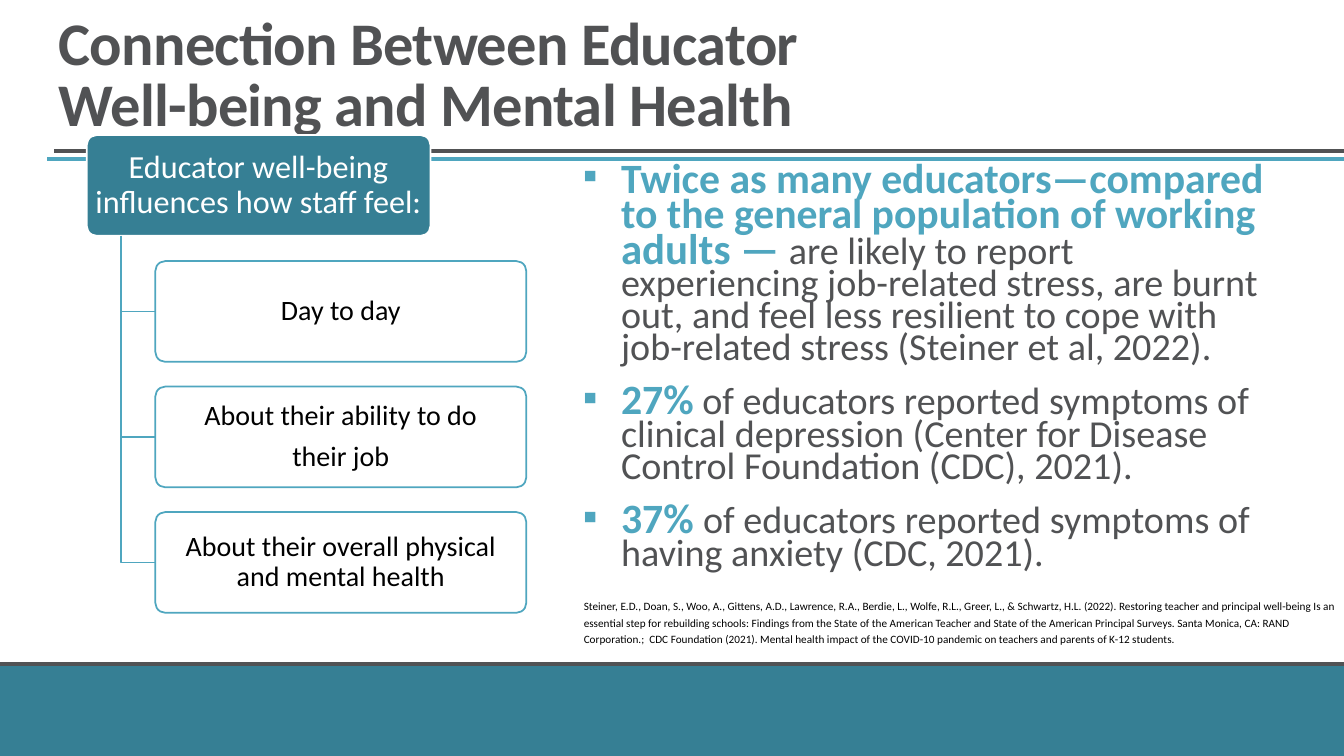
"""Builds the slide on educator well-being and mental health."""
from dataclasses import dataclass
from typing import NamedTuple

from lxml import etree
from pptx import Presentation
from pptx.dml.color import RGBColor
from pptx.enum.shapes import MSO_CONNECTOR, MSO_SHAPE
from pptx.enum.text import MSO_ANCHOR, MSO_AUTO_SIZE, PP_ALIGN
from pptx.oxml.ns import qn
from pptx.util import Inches, Pt

LEFT, CENTER = PP_ALIGN.LEFT, PP_ALIGN.CENTER
TOP, MIDDLE, BOTTOM = MSO_ANCHOR.TOP, MSO_ANCHOR.MIDDLE, MSO_ANCHOR.BOTTOM
RECT, ROUNDED = MSO_SHAPE.RECTANGLE, MSO_SHAPE.ROUNDED_RECTANGLE
STRAIGHT, NO_FIT = MSO_CONNECTOR.STRAIGHT, MSO_AUTO_SIZE.NONE


@dataclass(frozen=True)
class Theme:
    font: str = "Calibri"
    gray: str = "515254"
    sky: str = "4FA6BF"
    teal: str = "367F94"
    white: str = "FFFFFF"
    black: str = "000000"
    title: float = 43.2
    root: float = 23
    branch: float = 20
    stat: float = 29.8
    stat_end: float = 30.6
    body: float = 27.2
    source: float = 8
    rule: float = 3
    thin: float = 1.25


THEME = Theme()


class Box(NamedTuple):
    left: float
    top: float
    width: float
    height: float


class Run(NamedTuple):
    text: str
    size: float
    color: str
    bold: bool = False


@dataclass(frozen=True)
class Node:
    box: Box
    lines: tuple[str, ...]
    size: float
    color: str
    fill: str
    line: str
    inset: float


ROOT = Node(Box(0.86, 1.34, 3.41, 1), ("Educator well-being influences how staff feel:",),
            THEME.root, THEME.white, THEME.teal, THEME.white, 0.05)
BRANCH_TEXTS = (
    ("Day to day",),
    ("About their ability to do", "their job"),
    ("About their overall physical and mental health",),
)
BRANCH_LEFT, BRANCH_TOP, BRANCH_STEP, TRUNK_X = 1.54, 2.59, 1.245, 1.2
RULES = ((0.54, 1.5, THEME.gray), (0.47, 1.58, THEME.sky))
STATS = (
    (
        Run("Twice as many educators—compared to the general population of working ",
            THEME.stat, THEME.sky, True),
        Run("adults — ", THEME.stat_end, THEME.sky, True),
        Run("are likely to report experiencing job-related stress, are burnt out, and feel "
            "less resilient to cope with job-related stress (Steiner et al, 2022).",
            THEME.body, THEME.gray),
    ),
    (
        Run("27%", THEME.stat, THEME.sky, True),
        Run(" of educators reported symptoms of clinical depression (Center for Disease "
            "Control Foundation (CDC), 2021).", THEME.body, THEME.gray),
    ),
    (
        Run("37% ", THEME.stat, THEME.sky, True),
        Run("of educators reported symptoms of having anxiety (CDC, 2021).",
            THEME.body, THEME.gray),
    ),
)
SOURCE = (
    "Steiner, E.D., Doan, S., Woo, A., Gittens, A.D., Lawrence, R.A., Berdie, L., Wolfe, R.L., "
    "Greer, L., & Schwartz, H.L. (2022). Restoring teacher and principal well-being Is an "
    "essential step for rebuilding schools: Findings from the State of the American Teacher and "
    "State of the American Principal Surveys. Santa Monica, CA: RAND Corporation.;  CDC "
    "Foundation (2021). Mental health impact of the COVID-10 pandemic on teachers and parents "
    "of K-12 students."
)


def assign(obj, values: dict) -> None:
    for name, value in values.items():
        setattr(obj, name, value)


def place(box: Box) -> tuple:
    return tuple(Inches(v) for v in box)


def stroke(line, color: str, width: float) -> None:
    line.color.rgb = RGBColor.from_string(color)
    line.width = Pt(width)


def set_frame(tf, anchor, inset_x: float = 0, inset_y: float = 0) -> None:
    assign(tf, {
        "word_wrap": True, "auto_size": NO_FIT, "vertical_anchor": anchor,
        "margin_left": Inches(inset_x), "margin_right": Inches(inset_x),
        "margin_top": Inches(inset_y), "margin_bottom": Inches(inset_y),
    })


def add_bullet(p) -> None:
    pPr = p._p.get_or_add_pPr()
    pPr.set("marL", str(Inches(0.38)))
    pPr.set("indent", str(-Inches(0.38)))
    color = etree.SubElement(pPr, qn("a:buClr"))
    etree.SubElement(color, qn("a:srgbClr"), val=THEME.sky)
    etree.SubElement(pPr, qn("a:buFont"), typeface="Arial")
    etree.SubElement(pPr, qn("a:buChar"), char="▪")


def fill_text(tf, paragraphs, formats: dict, gap: float = 0, bullets: bool = False) -> None:
    for i, runs in enumerate(paragraphs):
        p = tf.add_paragraph() if i else tf.paragraphs[0]
        if bullets:
            add_bullet(p)
        assign(p, formats | {"space_before": Pt(gap if i else 0)})
        for run in runs:
            r = p.add_run()
            r.text = run.text
            assign(r.font, {"name": THEME.font, "size": Pt(run.size), "bold": run.bold})
            r.font.color.rgb = RGBColor.from_string(run.color)


def add_shape(s, kind, box: Box, fill: str, line: str, width: float):
    sp = s.shapes.add_shape(kind, *place(box))
    sp.shadow.inherit = False
    sp.fill.solid()
    sp.fill.fore_color.rgb = RGBColor.from_string(fill)
    stroke(sp.line, line, width)
    return sp


def add_rule(s, left: float, y: float, color: str) -> None:
    sp = s.shapes.add_connector(STRAIGHT, Inches(left), Inches(y), Inches(13.33), Inches(y))
    stroke(sp.line, color, THEME.rule)
    etree.SubElement(sp._element.spPr, qn("a:effectLst"))


def add_node(s, node: Node) -> None:
    sp = add_shape(s, ROUNDED, node.box, node.fill, node.line, THEME.thin)
    sp.adjustments[0] = 0.1
    set_frame(sp.text_frame, MIDDLE, node.inset, 0.03)
    fill_text(sp.text_frame, [(Run(t, node.size, node.color),) for t in node.lines],
              {"alignment": CENTER, "line_spacing": 0.9}, gap=7)


def add_elbow(s, y: float) -> None:
    x, start = Inches(TRUNK_X), Inches(ROOT.box.top + ROOT.box.height)
    builder = s.shapes.build_freeform(x, start)
    builder.add_line_segments([(x, Inches(y)), (Inches(BRANCH_LEFT), Inches(y))], close=False)
    sp = builder.convert_to_shape()
    sp.shadow.inherit = False
    sp.fill.background()
    stroke(sp.line, THEME.sky, THEME.thin)


def add_text(s, box: Box, anchor, paragraphs, formats: dict, **options) -> None:
    tf = s.shapes.add_textbox(*place(box)).text_frame
    set_frame(tf, anchor)
    fill_text(tf, paragraphs, formats, **options)


def add_title(s) -> None:
    sp = s.shapes.title
    assign(sp, dict(zip(("left", "top", "width", "height"), place(Box(0.48, 0.31, 8.83, 1.12)))))
    set_frame(sp.text_frame, BOTTOM, 0.1, 0.05)
    title = Run("Connection Between Educator Well-being and Mental Health",
                THEME.title, THEME.gray, True)
    fill_text(sp.text_frame, [(title,)], {"alignment": LEFT, "line_spacing": 0.85})
    sp.text_frame.paragraphs[0].runs[0].font._element.set("spc", "-50")


def main() -> None:
    prs = Presentation()
    prs.slide_width, prs.slide_height = Inches(13.33), Inches(7.5)
    s = prs.slides.add_slide(prs.slide_layouts[5])
    add_title(s)
    for rule in RULES:
        add_rule(s, *rule)
    add_shape(s, RECT, Box(-0.16, 6.59, 13.77, 1.22), THEME.teal, THEME.gray, THEME.rule)
    add_node(s, ROOT)
    for i, lines in enumerate(BRANCH_TEXTS):
        box = Box(BRANCH_LEFT, BRANCH_TOP + i * BRANCH_STEP, 3.68, 1)
        add_elbow(s, box.top + box.height / 2)
        add_node(s, Node(box, lines, THEME.branch, THEME.black, THEME.white, THEME.sky, 0.04))
    add_text(s, Box(5.78, 1.64, 6.85, 4.5), TOP, STATS,
             {"line_spacing": 0.7, "space_after": Pt(2)}, gap=12, bullets=True)
    add_text(s, Box(5.79, 5.91, 7.54, 0.5), BOTTOM,
             [(Run(SOURCE, THEME.source, THEME.black),)],
             {"line_spacing": 1.25, "space_after": Pt(6)})
    prs.save("out.pptx")


if __name__ == "__main__":
    main()
